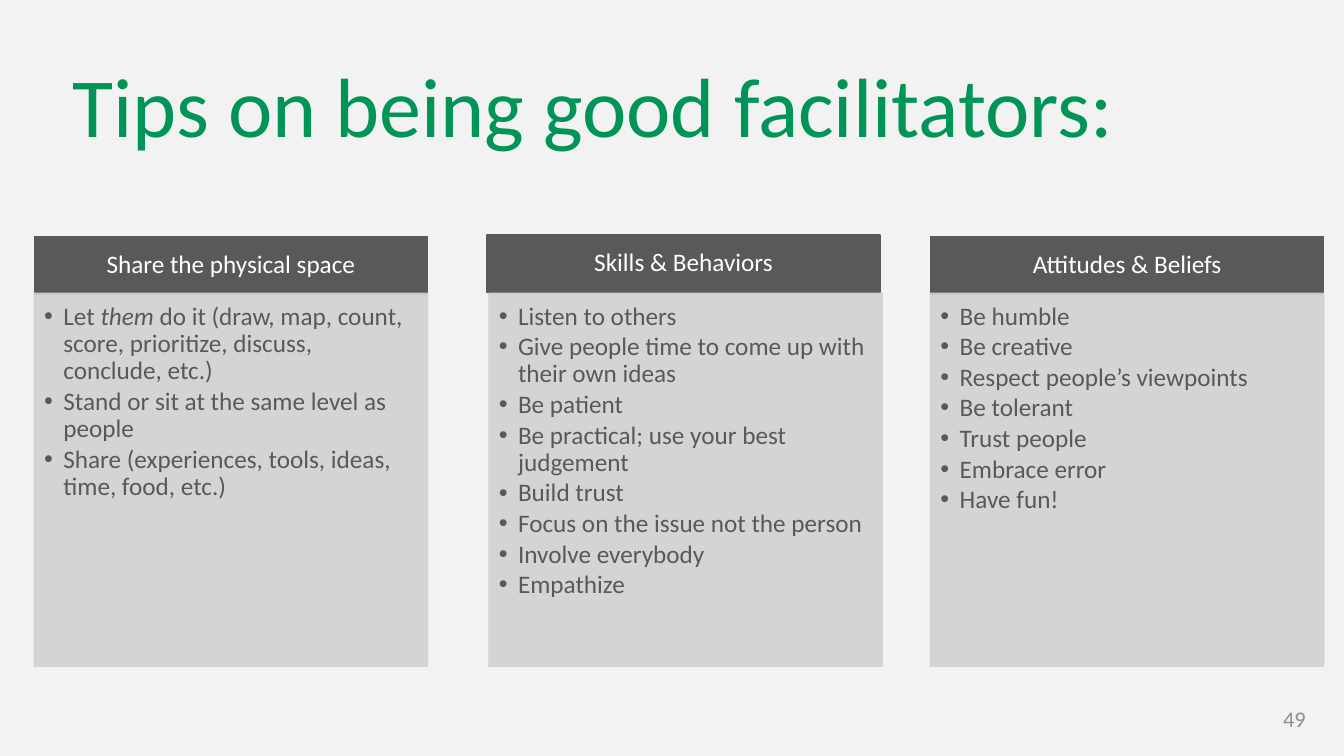
from lxml import etree
from pptx import Presentation, util as u
from pptx.dml.color import RGBColor
from pptx.enum import shapes, text
from pptx.oxml import ns

PX = 9144  # 100 px to the inch
FONT = "Calibri"
GREEN, DARK, PALE = "009457", "595959", "D1D1D1"
COLUMN_WIDTH, HEADER_HEIGHT, BODY_HEIGHT, BODY_TOP = 390, 57, 370, 291
INDENT = 19

COLUMNS = [  # header left, header top, body left, heading, tips (*italic*)
    (34, 235, 34, "Share the physical space", [
        "Let *them *do it (draw, map, count, score, prioritize, discuss, conclude, etc.)",
        "Stand or sit at the same level as people",
        "Share (experiences, tools, ideas, time, food, etc.)",
    ]),
    (483, 233, 485, "Skills & Behaviors", [
        "Listen to others",
        "Give people time to come up with their own ideas",
        "Be patient",
        "Be practical; use your best judgement",
        "Build trust",
        "Focus on the issue not the person",
        "Involve everybody",
        "Empathize",
    ]),
    (923, 235, 923, "Attitudes & Beliefs", [
        "Be humble",
        "Be creative",
        "Respect people’s viewpoints",
        "Be tolerant",
        "Trust people",
        "Embrace error",
        "Have fun!",
    ]),
]


def set_frame(frame, insets, anchor, alignment, size, color, line_spacing):
    """Format a filled text frame; insets are left, top, right, bottom in px."""
    frame.word_wrap = True
    frame.auto_size = text.MSO_AUTO_SIZE.NONE
    frame.vertical_anchor = anchor
    (frame.margin_left, frame.margin_top,
     frame.margin_right, frame.margin_bottom) = [inset * PX for inset in insets]
    for paragraph in frame.paragraphs:
        paragraph.alignment = alignment
        paragraph.line_spacing = line_spacing
        for run in paragraph.runs:
            run.font.name = FONT
            run.font.size = u.Pt(size)
            run.font.color.rgb = RGBColor.from_string(color)


def add_box(left, top, height, color):
    box = slide.shapes.add_shape(shapes.MSO_SHAPE.RECTANGLE, left * PX, top * PX,
                                 COLUMN_WIDTH * PX, height * PX)
    box.shadow.inherit = False
    box.fill.solid()
    box.fill.fore_color.rgb = RGBColor.from_string(color)
    box.line.color.rgb = RGBColor.from_string(color)
    box.line.width = u.Pt(1)
    return box


presentation = Presentation()
presentation.slide_width = 1333 * PX
presentation.slide_height = 750 * PX
slide = presentation.slides.add_slide(presentation.slide_layouts[5])
slide.background.fill.solid()
slide.background.fill.fore_color.rgb = RGBColor.from_string("F2F2F2")

title = slide.shapes.title
title.left, title.top, title.width, title.height = 67 * PX, 62 * PX, 1079 * PX, 100 * PX
title.text_frame.text = "Tips on being good facilitators:"
set_frame(title.text_frame, (5, 5, 5, 5), text.MSO_ANCHOR.MIDDLE,
          text.PP_ALIGN.LEFT, 60, GREEN, 0.8)

for header_left, header_top, body_left, heading, tips in COLUMNS:
    header = add_box(header_left, header_top, HEADER_HEIGHT, DARK)
    header.text_frame.text = heading
    set_frame(header.text_frame, (14, 8, 14, 8), text.MSO_ANCHOR.MIDDLE,
              text.PP_ALIGN.CENTER, 18, "FFFFFF", 0.9)

    body = add_box(body_left, BODY_TOP, BODY_HEIGHT, PALE)
    for color in body._element.spPr.iter(ns.qn("a:srgbClr")):
        etree.SubElement(color, ns.qn("a:alpha"), val="90000")

    frame = body.text_frame
    for index, tip in enumerate(tips):
        paragraph = frame.add_paragraph() if index else frame.paragraphs[0]
        for part_index, part in enumerate(tip.split("*")):
            run = paragraph.add_run()
            run.text = part
            run.font.italic = part_index % 2 == 1
    set_frame(frame, (10, 10, 14, 16), text.MSO_ANCHOR.TOP,
              text.PP_ALIGN.LEFT, 18, DARK, 0.9)
    for paragraph in frame.paragraphs:
        paragraph.level = 1
        paragraph.space_after = u.Pt(2.4)
        properties = paragraph._p.get_or_add_pPr()
        properties.set("marL", str(INDENT * PX))
        properties.set("indent", str(-INDENT * PX))
        etree.SubElement(properties, ns.qn("a:buFont"), typeface="Arial")
        etree.SubElement(properties, ns.qn("a:buChar"), char="•")

page_number = slide.shapes.add_textbox(1005 * PX, 693 * PX, 300 * PX, 40 * PX)
page_number.text_frame.text = "49"
set_frame(page_number.text_frame, (10, 5, 10, 5), text.MSO_ANCHOR.MIDDLE,
          text.PP_ALIGN.RIGHT, 16, "909090", 1.0)

presentation.save("out.pptx")
